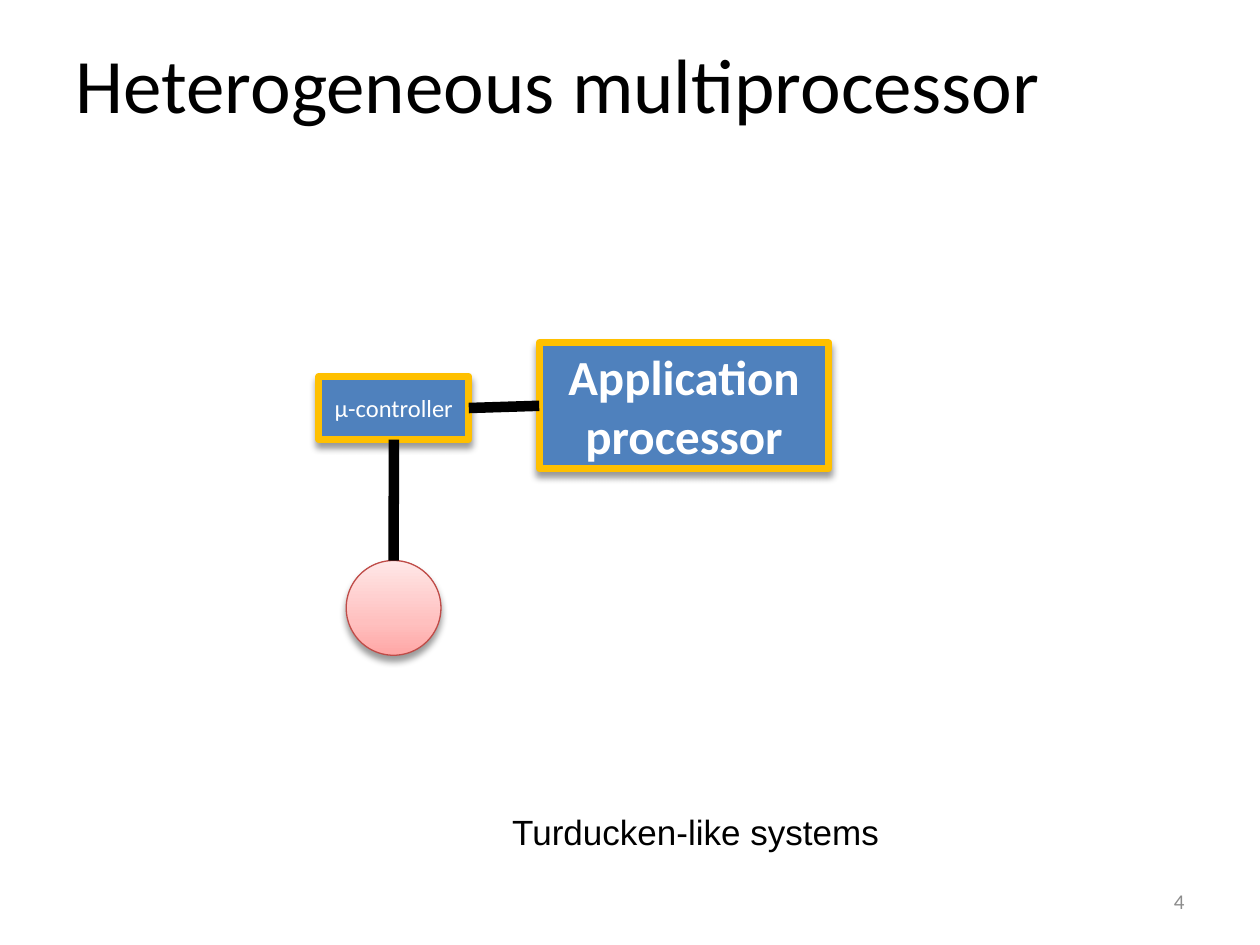
from dataclasses import dataclass

from lxml import etree
from pptx import Presentation
from pptx import util as u
from pptx.dml.color import RGBColor
from pptx.enum import shapes, text
from pptx.oxml import ns


@dataclass(frozen=True)
class Theme:
    heading_font: str = "Calibri"
    caption_font: str = "Arial"
    black: str = "000000"
    white: str = "FFFFFF"
    grey: str = "8C8C8C"
    blue: str = "4F81BD"
    amber: str = "FFC000"
    red: str = "BF4C48"
    red_gradient: tuple = ((0, "FFA6A5"), (35, "FFC0BF"), (100, "FFE7E7"))
    title_size: int = 44
    processor_size: int = 28
    caption_size: int = 20
    controller_size: int = 14
    number_size: int = 12
    box_line: float = 4
    circle_line: float = 0.75
    link_line: float = 6


def add_xml(parent, tag, **attributes):
    return etree.SubElement(parent, ns.qn(tag), {name: str(value) for name, value in attributes.items()})


class SlideBuilder:
    def __init__(self, presentation, theme):
        self.theme = theme
        self.slide = presentation.slides.add_slide(presentation.slide_layouts[5])

    def set_text(self, shape, content, size, color, font=None, bold=False,
                 align=text.PP_ALIGN.CENTER, anchor=text.MSO_ANCHOR.MIDDLE):
        frame = shape.text_frame
        frame.text = content
        frame.word_wrap = True
        frame.vertical_anchor = anchor
        paragraph = frame.paragraphs[0]
        paragraph.alignment = align
        run_font = paragraph.runs[0].font
        run_font.name = font or self.theme.heading_font
        run_font.size = u.Pt(size)
        run_font.bold = bold
        run_font.color.rgb = RGBColor.from_string(color)

    def title(self, content, *box):
        title = self.slide.shapes.title
        title.left, title.top, title.width, title.height = map(u.Cm, box)
        self.set_text(title, content, self.theme.title_size, self.theme.black, align=text.PP_ALIGN.LEFT)

    def label(self, content, box, size, color, **style):
        shape = self.slide.shapes.add_textbox(*map(u.Cm, box))
        self.set_text(shape, content, size, color, **style)

    def outlined(self, kind, box, color, width):
        """Add a preset shape with a coloured outline and a soft shadow below it."""
        shape = self.slide.shapes.add_shape(kind, *map(u.Cm, box))
        shape.line.color.rgb = RGBColor.from_string(color)
        shape.line.width = u.Pt(width)
        shape.shadow.inherit = False
        effects = shape.element.spPr.find(ns.qn("a:effectLst"))
        shadow = add_xml(effects, "a:outerShdw", blurRad=u.Pt(4), dist=u.Pt(3), dir=90 * 60000, rotWithShape=0)
        shadow_color = add_xml(shadow, "a:srgbClr", val=self.theme.black)
        add_xml(shadow_color, "a:alpha", val=40000)
        return shape

    def processor(self, content, box, size, bold=False):
        shape = self.outlined(shapes.MSO_SHAPE.RECTANGLE, box, self.theme.amber, self.theme.box_line)
        shape.fill.solid()
        shape.fill.fore_color.rgb = RGBColor.from_string(self.theme.blue)
        self.set_text(shape, content, size, self.theme.white, bold=bold)
        return shape

    def sensor(self, box):
        shape = self.outlined(shapes.MSO_SHAPE.OVAL, box, self.theme.red, self.theme.circle_line)
        shape.fill.gradient()
        shape.fill.gradient_angle = 90
        stops = shape.element.spPr.find(".//" + ns.qn("a:gsLst"))
        for old_stop in list(stops):
            stops.remove(old_stop)
        for percent, color in self.theme.red_gradient:
            add_xml(add_xml(stops, "a:gs", pos=percent * 1000), "a:srgbClr", val=color)
        return shape

    def link(self, start, start_site, end, end_site):
        """Join two shapes; sites run 0 top, 1 left, 2 bottom, 3 right on a rectangle."""
        connector = self.slide.shapes.add_connector(shapes.MSO_CONNECTOR.STRAIGHT, 0, 0, 0, 0)
        connector.begin_connect(start, start_site)
        connector.end_connect(end, end_site)
        connector.line.color.rgb = RGBColor.from_string(self.theme.black)
        connector.line.width = u.Pt(self.theme.link_line)
        add_xml(connector.element.spPr, "a:effectLst")


def main():
    presentation = Presentation()
    presentation.slide_width, presentation.slide_height = u.Cm(25.4), u.Cm(19.05)
    theme = Theme()
    builder = SlideBuilder(presentation, theme)

    builder.title("Heterogeneous multiprocessor", 1.27, 0.08, 22.86, 3.18)
    builder.label("4", (18.21, 17.65, 5.92, 1.02), theme.number_size, theme.grey,
                  align=text.PP_ALIGN.RIGHT)

    application = builder.processor("Application processor", (10.87, 6.91, 5.84, 2.54),
                                    theme.processor_size, bold=True)
    controller = builder.processor("µ-controller", (6.43, 7.59, 3.02, 1.27), theme.controller_size)
    sensor = builder.sensor((6.98, 11.3, 1.91, 1.91))
    builder.link(sensor, 0, controller, 2)
    builder.link(application, 1, controller, 3)

    builder.label("Turducken-like systems", (7.19, 16.21, 13.67, 1.12), theme.caption_size, theme.black,
                  font=theme.caption_font, anchor=text.MSO_ANCHOR.TOP)
    presentation.save("out.pptx")


if __name__ == "__main__":
    main()
